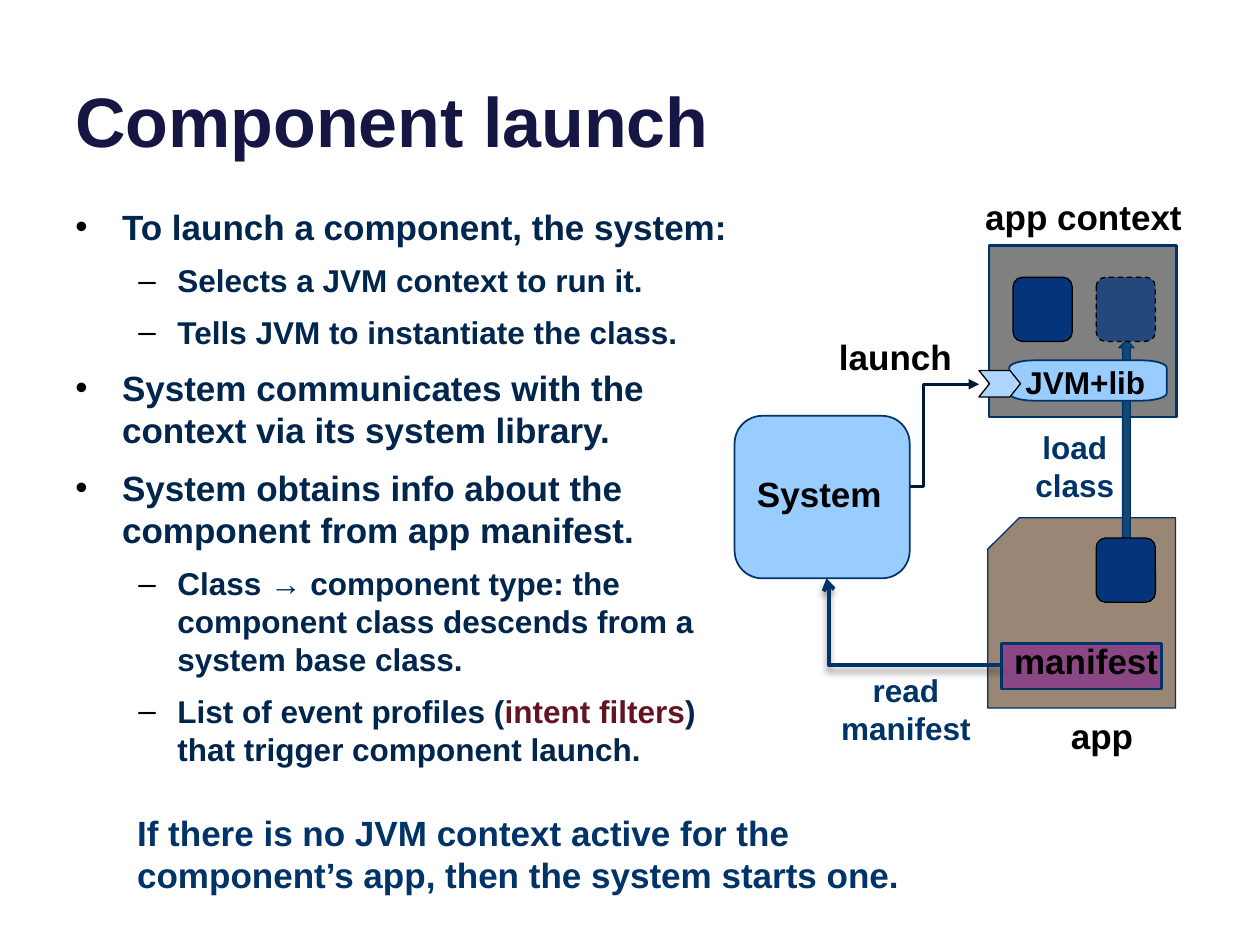
"""Build the slide on how a system launches an app component."""
from math import cos, pi, sin

from lxml import etree
from pptx import Presentation
from pptx.dml.color import RGBColor
from pptx.enum.dml import MSO_LINE
from pptx.enum.shapes import MSO_CONNECTOR as Connector, MSO_SHAPE as Shape
from pptx.enum.text import MSO_ANCHOR as Anchor, PP_ALIGN as Align
from pptx.oxml import parse_xml
from pptx.oxml.ns import nsdecls, qn
from pptx.util import Inches, Pt

BLACK = RGBColor(0x00, 0x00, 0x00)
TITLE_NAVY = RGBColor(0x16, 0x16, 0x45)
BODY_NAVY = RGBColor(0x00, 0x26, 0x4D)
DARK_NAVY = RGBColor(0x00, 0x19, 0x34)
BLUE = RGBColor(0x00, 0x33, 0x67)
CLASS_BLUE = RGBColor(0x04, 0x35, 0x7B)
ARROW_BLUE = RGBColor(0x13, 0x47, 0x76)
SKY = RGBColor(0x99, 0xCC, 0xFF)
PALE_SKY = RGBColor(0xAE, 0xD6, 0xFF)
GREY = RGBColor(0x80, 0x80, 0x80)
TAN = RGBColor(0x99, 0x86, 0x74)
PURPLE = RGBColor(0x8B, 0x47, 0x85)
RED = RGBColor(0x65, 0x12, 0x22)

presentation = Presentation()
presentation.slide_width, presentation.slide_height = Inches(10), Inches(7.5)
slide = presentation.slides.add_slide(presentation.slide_layouts[6])


def add_text(box, paragraphs, size, color, align=Align.LEFT, anchor=Anchor.TOP):
    textbox = slide.shapes.add_textbox(*map(Inches, box))
    frame = textbox.text_frame
    frame.word_wrap = True
    frame.vertical_anchor = anchor
    for index, runs in enumerate(paragraphs):
        paragraph = frame.paragraphs[0] if index == 0 else frame.add_paragraph()
        paragraph.alignment = align
        for text, run_color in runs:
            run = paragraph.add_run()
            run.text = text
            run.font.name = "Arial"
            run.font.size = Pt(size)
            run.font.bold = True
            run.font.color.rgb = run_color or color
    return frame


def style(shape, fill, line, width):
    shape.shadow.inherit = False
    shape.fill.solid()
    shape.fill.fore_color.rgb = fill
    shape.line.color.rgb = line
    shape.line.width = Pt(width)
    return shape


add_text((0.5, -0.37, 9, 1.7), [[("Component launch", None)]], 40, TITLE_NAVY,
         anchor=Anchor.BOTTOM)

outline = [
    (0, [("To launch a component, the system:", None)]),
    (1, [("Selects a JVM context to run it.", None)]),
    (1, [("Tells JVM to instantiate the class.", None)]),
    (0, [("System communicates with the context via its system library.", None)]),
    (0, [("System obtains info about the component from app manifest.", None)]),
    (1, [("Class → component type: the component class descends from a system base class.", None)]),
    (1, [("List of event profiles (", None), ("intent filters", RED),
         (") that trigger component launch.", None)]),
]
levels = [(0.37, 0.37, 9, 20, "•"), (0.81, 0.31, 8, 18, "–")]
body = add_text((0.5, 1.58, 5.41, 4.5), [runs for _, runs in outline], 20, BODY_NAVY)
for paragraph, (level, _) in zip(body.paragraphs, outline):
    margin, hanging, space, size, bullet = levels[level]
    paragraph.level = level
    paragraph.space_before = Pt(space)
    for run in paragraph.runs:
        run.font.size = Pt(size)
    properties = paragraph._p.get_or_add_pPr()
    properties.set("marL", str(Inches(margin)))
    properties.set("indent", str(-Inches(hanging)))
    properties.append(parse_xml(
        f'<a:buClr {nsdecls("a")}><a:srgbClr val="{BLACK}"/></a:buClr>'))
    properties.append(parse_xml(f'<a:buFont {nsdecls("a")} typeface="Arial"/>'))
    properties.append(parse_xml(f'<a:buChar {nsdecls("a")} char="{bullet}"/>'))

for kind, box, fill, line, width in [
    (Shape.RECTANGLE, (7.85, 1.95, 1.49, 1.36), GREY, BLUE, 1.5),
    (Shape.SNIP_1_RECTANGLE, (7.84, 4.11, 1.49, 1.51), TAN, BLUE, 0.75),
    (Shape.UP_ARROW, (8.88, 2.7, 0.12, 1.61), ARROW_BLUE, BLUE, 0.75),
]:
    shape = style(slide.shapes.add_shape(kind, *map(Inches, box)), fill, line, width)
    if kind == Shape.SNIP_1_RECTANGLE:
        shape._element.spPr.find(qn("a:xfrm")).set("flipH", "1")

for left, top, loading in [(8.04, 2.2, False), (8.7, 2.2, True), (8.7, 4.27, False)]:
    component = style(slide.shapes.add_shape(
        Shape.ROUNDED_RECTANGLE, Inches(left), Inches(top), Inches(0.47), Inches(0.51)),
        CLASS_BLUE, BLACK, 0.75)
    component.adjustments[0] = 0.16
    if loading:
        component.line.dash_style = MSO_LINE.DASH
        color = component._element.spPr.find(qn("a:solidFill"))[0]
        etree.SubElement(color, qn("a:alpha")).set("val", "74000")

corners = [(9.06, 3.12, 0), (8.21, 3.12, 1), (8.21, 2.92, 2), (9.06, 2.92, 3)]
points = []
for x, y, quarter in corners:
    for step in range(9):
        angle = (quarter + step / 8) * pi / 2
        points.append((Inches(x + 0.2 * cos(angle)), Inches(y + 0.06 * sin(angle))))
builder = slide.shapes.build_freeform(*points[0])
builder.add_line_segments(points[1:], close=True)
style(builder.convert_to_shape(), SKY, BLUE, 1)

entry = style(slide.shapes.add_shape(
    Shape.CHEVRON, Inches(7.77), Inches(2.94), Inches(0.33), Inches(0.21)),
    PALE_SKY, BLACK, 0.75)
entry.adjustments[0] = 0.4

system = style(slide.shapes.add_shape(
    Shape.ROUNDED_RECTANGLE, Inches(5.83), Inches(3.3), Inches(1.39), Inches(1.29)),
    SKY, BLUE, 1)
system.adjustments[0] = 0.17
style(slide.shapes.add_shape(
    Shape.RECTANGLE, Inches(7.95), Inches(5.11), Inches(1.27), Inches(0.36)),
    PURPLE, BLUE, 1.5)

SHADOW = ('<a:outerShdw blurRad="50800" dist="38100" dir="5400000" rotWithShape="0">'
          '<a:srgbClr val="000000"><a:alpha val="40000"/></a:srgbClr></a:outerShdw>')
for ends, color, width, head, bend, effect in [
    ((6.89, 3.86, 7.77, 3.05), DARK_NAVY, 1.5, "triangle", 50000, ""),
    ((7.95, 5.28, 6.56, 4.59), BLUE, 2.25, "arrow", 98700, SHADOW),
]:
    connector = slide.shapes.add_connector(Connector.ELBOW, *map(Inches, ends))
    connector.line.color.rgb = color
    connector.line.width = Pt(width)
    etree.SubElement(connector.line._get_or_add_ln(), qn("a:tailEnd")).set("type", head)
    properties = connector._element.spPr
    guide = etree.SubElement(properties.find(qn("a:prstGeom")).find(qn("a:avLst")), qn("a:gd"))
    guide.set("name", "adj1")
    guide.set("fmla", f"val {bend}")
    properties.append(parse_xml(f'<a:effectLst {nsdecls("a")}>{effect}</a:effectLst>'))
    if not effect:
        slide.shapes._spTree.remove(connector._element)
        system._element.addprevious(connector._element)

for text, box, size, color, align in [
    ("System", (5.91, 3.7, 1.77, 0.44), 20, BLACK, Align.LEFT),
    ("JVM+lib", (8.04, 2.83, 1.77, 0.41), 18, BLACK, Align.LEFT),
    ("launch", (6.56, 2.61, 1.85, 0.44), 20, BLACK, Align.LEFT),
    ("manifest", (7.95, 5.03, 1.85, 0.44), 20, BLACK, Align.LEFT),
    ("read manifest", (6.52, 5.28, 1.34, 0.71), 18, BLUE, Align.CENTER),
    ("load class", (7.86, 3.35, 1.34, 0.71), 18, BLUE, Align.CENTER),
    ("app context", (7.72, 1.5, 1.85, 0.44), 20, BLACK, Align.LEFT),
    ("app", (8.4, 5.62, 1.85, 0.44), 20, BLACK, Align.LEFT),
    ("If there is no JVM context active for the component’s app, then the system starts one.",
     (0.99, 6.39, 7.14, 0.77), 20, BLUE, Align.LEFT),
]:
    add_text(box, [[(text, None)]], size, color, align)

presentation.save("out.pptx")
